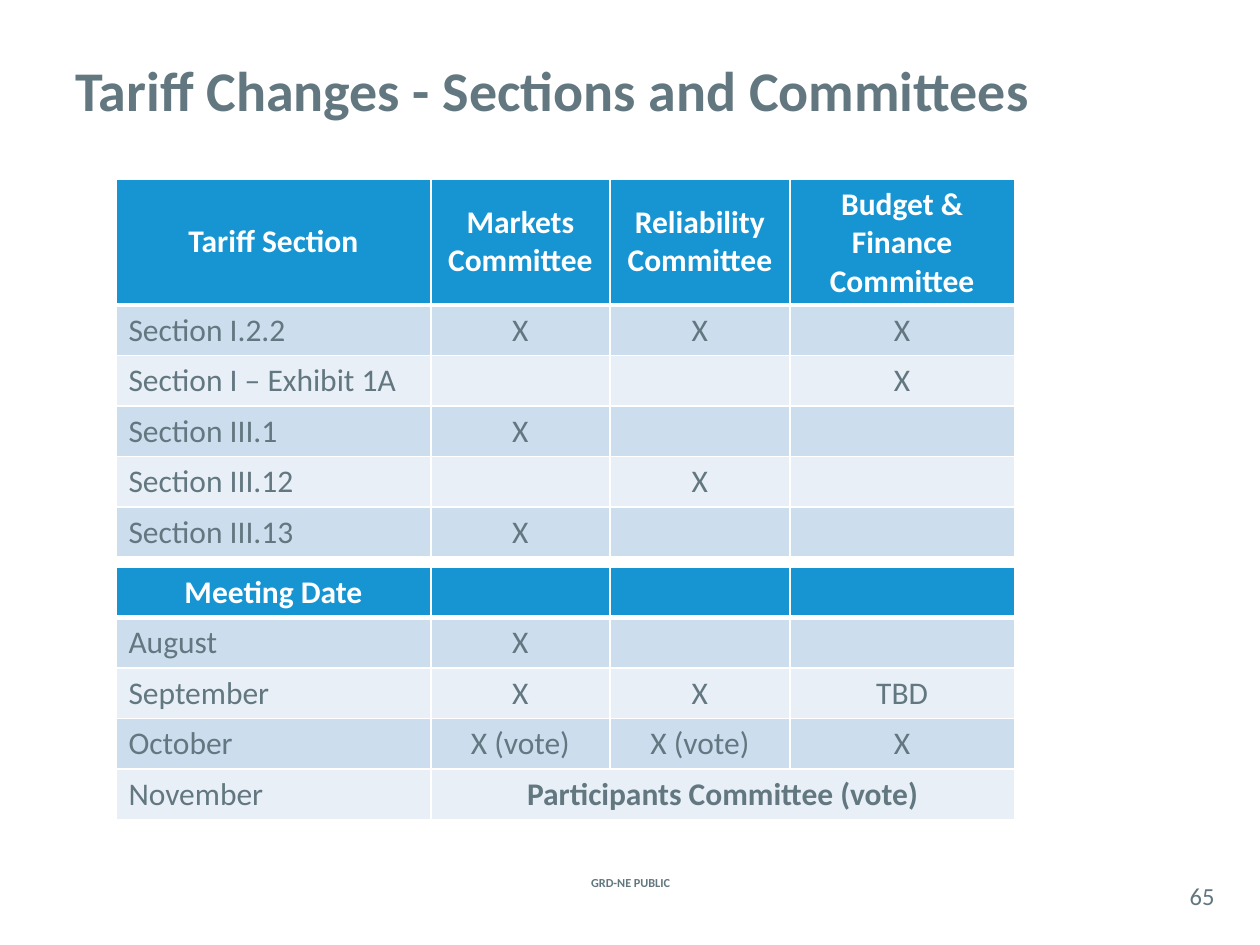
from dataclasses import dataclass

from lxml import etree
from pptx import Presentation
from pptx.dml.color import RGBColor
from pptx.enum.text import MSO_ANCHOR as Anchor, PP_ALIGN as Align
from pptx.oxml.ns import qn
from pptx.util import Inches, Pt


@dataclass(frozen=True)
class Theme:
    font: str = "Calibri"
    slate: str = "62777F"
    header: str = "1795D2"
    bands: tuple = ("CCDDEE", "E8EFF7")
    white: str = "FFFFFF"
    title_size: float = 32
    table_size: float = 18
    number_size: float = 14
    footer_size: float = 7
    rule: float = 1
    header_rule: float = 3


THEME = Theme()
COLUMN_WIDTHS = (2.5, 1.42, 1.43, 1.78)
ROW_HEIGHT = 0.4

SECTIONS = [
    ("Tariff Section", "Markets Committee", "Reliability Committee",
     "Budget & Finance Committee"),
    ("Section I.2.2", "X", "X", "X"),
    ("Section I – Exhibit 1A", "", "", "X"),
    ("Section III.1", "X", "", ""),
    ("Section III.12", "", "X", ""),
    ("Section III.13", "X", "", ""),
]
MEETINGS = [
    ("Meeting Date", "", "", ""),
    ("August", "X", "", ""),
    ("September", "X", "X", "TBD"),
    ("October", "X (vote)", "X (vote)", "X"),
    ("November", "Participants Committee (vote)", "", ""),
]


def write(paragraph, text, size, color, bold=False, align=Align.LEFT):
    paragraph.alignment = align
    run = paragraph.add_run()
    run.text = text
    font = run.font
    font.name, font.size, font.bold = THEME.font, Pt(size), bold
    font.color.rgb = RGBColor.from_string(color)


def add_label(slide, box, text, size, bold=False, align=Align.CENTER, inset=0):
    frame = slide.shapes.add_textbox(*map(Inches, box)).text_frame
    frame.word_wrap = True
    frame.vertical_anchor = Anchor.MIDDLE
    frame.margin_left = frame.margin_right = Inches(inset)
    frame.margin_top = frame.margin_bottom = 0
    write(frame.paragraphs[0], text, size, THEME.slate, bold, align)


def style_cell(cell, fill, top, bottom):
    """Draw the white borders first, then the fill, as the schema orders them."""
    properties = cell._tc.get_or_add_tcPr()
    sides = {"lnL": THEME.rule, "lnR": THEME.rule, "lnT": top, "lnB": bottom}
    for side, width in sides.items():
        line = etree.SubElement(properties, qn(f"a:{side}"), w=str(Pt(width)))
        solid = etree.SubElement(line, qn("a:solidFill"))
        etree.SubElement(solid, qn("a:srgbClr"), val=THEME.white)
    cell.fill.solid()
    cell.fill.fore_color.rgb = RGBColor.from_string(fill)


def add_committee_table(slide, left, top, rows, header_height):
    """Place a table with a header row and banded rows; return it."""
    height = header_height + ROW_HEIGHT * (len(rows) - 1)
    box = map(Inches, (left, top, sum(COLUMN_WIDTHS), height))
    table = slide.shapes.add_table(len(rows), len(COLUMN_WIDTHS), *box).table
    for column, width in zip(table.columns, COLUMN_WIDTHS):
        column.width = Inches(width)
    for r, row in enumerate(rows):
        is_header = r == 0
        table.rows[r].height = Inches(header_height if is_header else ROW_HEIGHT)
        fill = THEME.header if is_header else THEME.bands[(r - 1) % 2]
        color = THEME.white if is_header else THEME.slate
        for c, text in enumerate(row):
            cell = table.cell(r, c)
            style_cell(cell, fill,
                       top=THEME.header_rule if r == 1 else THEME.rule,
                       bottom=THEME.header_rule if is_header else THEME.rule)
            if is_header:
                cell.vertical_anchor = Anchor.MIDDLE
            if text:
                align = Align.CENTER if is_header or c else Align.LEFT
                write(cell.text_frame.paragraphs[0], text, THEME.table_size,
                      color, is_header, align)
    return table


def add_meeting_table(slide, left, top):
    """Place the meeting dates, with the final vote across all committees."""
    table = add_committee_table(slide, left, top, MEETINGS, ROW_HEIGHT)
    last = len(MEETINGS) - 1
    final_vote = table.cell(last, 1)
    final_vote.merge(table.cell(last, len(COLUMN_WIDTHS) - 1))
    final_vote.text_frame.paragraphs[0].runs[0].font.bold = True


def add_tariff_slide(deck):
    slide = deck.slides.add_slide(deck.slide_layouts[6])
    add_label(slide, (4.27, 6.92, 1.47, 0.17), "GRD-NE PUBLIC",
              THEME.footer_size, bold=True)
    add_meeting_table(slide, 0.92, 4.5)
    add_committee_table(slide, 0.92, 1.42, SECTIONS, header_height=1)
    add_label(slide, (9.33, 6.96, 0.42, 0.29), "65", THEME.number_size)
    add_label(slide, (0.5, 0.08, 9, 1.25),
              "Tariff Changes - Sections and Committees",
              THEME.title_size, bold=True, align=Align.LEFT, inset=0.1)


def main():
    deck = Presentation()
    deck.slide_width, deck.slide_height = Inches(10), Inches(7.5)
    add_tariff_slide(deck)
    deck.save("out.pptx")


if __name__ == "__main__":
    main()
